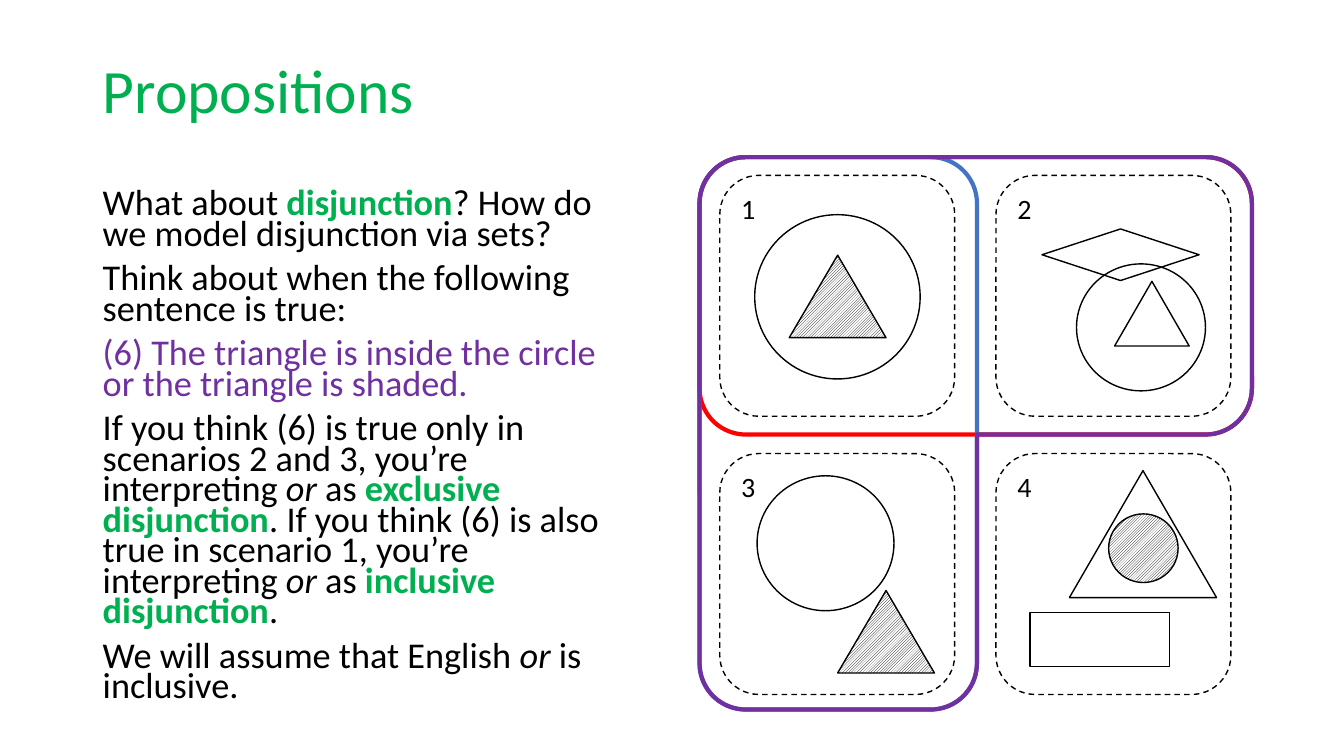
from dataclasses import dataclass
from math import cos, radians, sin

from pptx import Presentation
from pptx.dml.color import RGBColor
from pptx.enum.dml import MSO_LINE, MSO_PATTERN
from pptx.enum.shapes import MSO_SHAPE
from pptx.enum.text import MSO_ANCHOR, PP_ALIGN
from pptx.util import Cm, Pt


@dataclass(frozen=True)
class Theme:
    font: str = "Calibri"
    black: RGBColor = RGBColor(0x00, 0x00, 0x00)
    white: RGBColor = RGBColor(0xFF, 0xFF, 0xFF)
    green: RGBColor = RGBColor(0x00, 0xB0, 0x50)
    purple: RGBColor = RGBColor(0x70, 0x30, 0xA0)
    red: RGBColor = RGBColor(0xFF, 0x00, 0x00)
    blue: RGBColor = RGBColor(0x44, 0x72, 0xC4)
    title_size: float = 44
    body_size: float = 25.9
    label_size: float = 20
    thin: float = 1
    thick: float = 3


class SlideBuilder:
    def __init__(self, page, theme):
        self.page = page
        self.theme = theme

    def style_span(self, span, size, style="plain"):
        font = span.font
        font.name = self.theme.font
        font.size = Pt(size)
        font.bold = style == "key"
        font.italic = style == "word"
        colors = {"key": self.theme.green, "example": self.theme.purple}
        font.color.rgb = colors.get(style, self.theme.black)

    def text(self, place, paragraphs, size, spacing, before=0, anchor=MSO_ANCHOR.TOP):
        box = self.page.shapes.add_textbox(*map(Cm, place))
        frame = box.text_frame
        frame.word_wrap = True
        frame.vertical_anchor = anchor
        for index, pieces in enumerate(paragraphs):
            para = frame.add_paragraph() if index else frame.paragraphs[0]
            para.line_spacing = spacing
            para.space_before = Pt(before)
            for words, style in pieces:
                span = para.add_run()
                span.text = words
                self.style_span(span, size, style)

    def outline(self, shape, color, width):
        shape.shadow.inherit = False
        shape.fill.background()
        shape.line.color.rgb = color
        shape.line.width = Pt(width)

    def figure(self, kind, place, shaded=False):
        shape = self.page.shapes.add_shape(kind, *map(Cm, place))
        self.outline(shape, self.theme.black, self.theme.thin)
        if shaded:
            shape.fill.patterned()
            shape.fill.pattern = MSO_PATTERN.LIGHT_UPWARD_DIAGONAL
            shape.fill.fore_color.rgb = self.theme.black
            shape.fill.back_color.rgb = self.theme.white
        return shape

    def scenario(self, place, label):
        tile = self.figure(MSO_SHAPE.ROUNDED_RECTANGLE, place)
        tile.line.dash_style = MSO_LINE.DASH
        frame = tile.text_frame
        frame.text = label
        frame.vertical_anchor = MSO_ANCHOR.TOP
        para = frame.paragraphs[0]
        para.alignment = PP_ALIGN.LEFT
        self.style_span(para.runs[0], self.theme.label_size)

    def set_border(self, place, color, rotation=0):
        border = self.page.shapes.add_shape(MSO_SHAPE.ROUNDED_RECTANGLE, *map(Cm, place))
        border.rotation = rotation
        self.outline(border, color, self.theme.thick)

    def union_border(self, left, top, length, arm, radius):
        def corner(x, y, start):
            angles = [radians(start + step * 5) for step in range(19)]
            return [(x + radius * cos(a), y + radius * sin(a)) for a in angles]

        right, bottom = left + length - radius, top + length - radius
        points = [
            *corner(right, top + radius, -90),
            *corner(right, top + arm - radius, 0),
            (left + arm, top + arm),
            *corner(left + arm - radius, bottom, 0),
            *corner(left + radius, bottom, 90),
            *corner(left + radius, top + radius, 180),
        ]
        points = [(Cm(x), Cm(y)) for x, y in points]
        builder = self.page.shapes.build_freeform(*points[0])
        builder.add_line_segments(points[1:], close=True)
        self.outline(builder.convert_to_shape(), self.theme.purple, self.theme.thick)


BODY = [
    [
        ("What about ", "plain"),
        ("disjunction", "key"),
        ("? How do we model disjunction via sets?", "plain"),
    ],
    [("Think about when the following sentence is true:", "plain")],
    [("(6) The triangle is inside the circle or the triangle is shaded.", "example")],
    [
        ("If you think (6) is true only in scenarios 2 and 3, you’re interpreting ", "plain"),
        ("or ", "word"),
        ("as ", "plain"),
        ("exclusive disjunction", "key"),
        (". If you think (6) is also true in scenario 1, you’re interpreting ", "plain"),
        ("or", "word"),
        (" as ", "plain"),
        ("inclusive disjunction", "key"),
        (".", "plain"),
    ],
    [
        ("We will assume that English ", "plain"),
        ("or", "word"),
        (" is inclusive.", "plain"),
    ],
]

FIGURES = [
    (MSO_SHAPE.OVAL, (19.02, 5.41, 4.17, 4.14), False),
    (MSO_SHAPE.ISOSCELES_TRIANGLE, (19.89, 6.43, 2.44, 2.08), True),
    (MSO_SHAPE.OVAL, (27.13, 6.65, 3.25, 3.2), False),
    (MSO_SHAPE.ISOSCELES_TRIANGLE, (28.09, 7.09, 1.88, 1.63), False),
    (MSO_SHAPE.DIAMOND, (26.26, 5.77, 3.96, 1.3), False),
    (MSO_SHAPE.ISOSCELES_TRIANGLE, (21.11, 14.88, 2.44, 2.08), True),
    (MSO_SHAPE.OVAL, (19.08, 11.99, 3.45, 3.4), False),
    (MSO_SHAPE.ISOSCELES_TRIANGLE, (26.95, 11.86, 3.71, 3.2), False),
    (MSO_SHAPE.OVAL, (27.94, 12.95, 1.75, 1.73), True),
    (MSO_SHAPE.RECTANGLE, (25.96, 15.44, 3.51, 1.35), False),
]


def main():
    deck = Presentation()
    deck.slide_width, deck.slide_height = Cm(33.87), Cm(19.05)
    page = deck.slides.add_slide(deck.slide_layouts[6])
    theme = Theme()
    slide = SlideBuilder(page, theme)

    slide.text((2.34, 0, 29.21, 4.7), [[("Propositions", "key")]],
               theme.title_size, 0.9, anchor=MSO_ANCHOR.MIDDLE)
    page.shapes[0].text_frame.paragraphs[0].runs[0].font.bold = False
    slide.text((2.34, 4.7, 13.67, 14.35), BODY, theme.body_size, 0.7, before=10)

    for kind, place, shaded in FIGURES:
        slide.figure(kind, place, shaded)
    for index in range(4):
        row, column = divmod(index, 2)
        place = (18.14 + column * 6.96, 4.42 + row * 7.01, 5.92, 6.07)
        slide.scenario(place, str(index + 1))

    left, top, length, arm = 17.63, 3.96, 13.92, 6.99
    shift = (length - arm) / 2
    slide.set_border((left, top, length, arm), theme.red)
    slide.set_border((left - shift, top + shift, length, arm), theme.blue, rotation=90)
    slide.union_border(left, top, length, arm, radius=1.16)

    deck.save("out.pptx")


if __name__ == "__main__":
    main()
